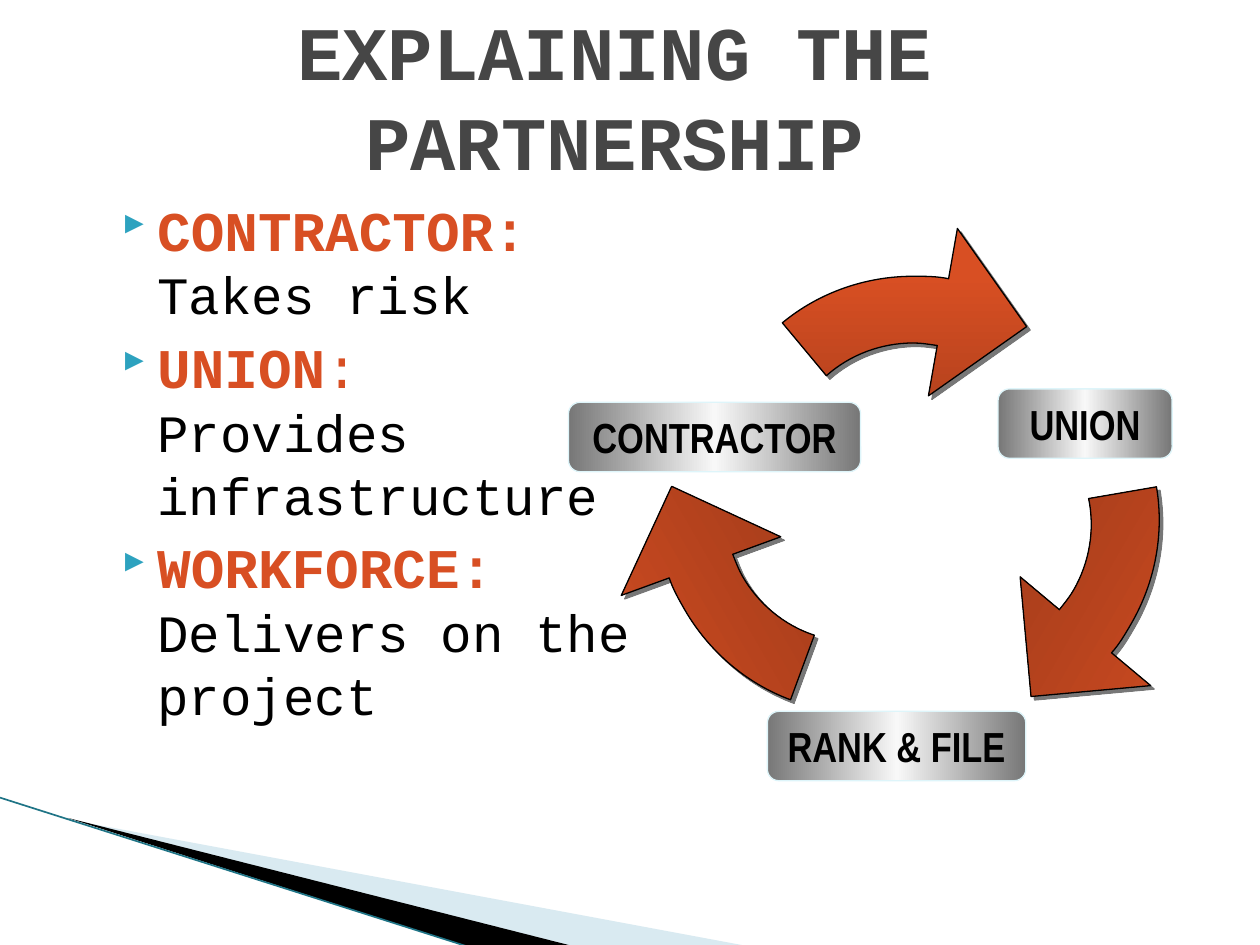
from lxml import etree
from pptx import Presentation
from pptx.dml.color import RGBColor
from pptx.enum.shapes import MSO_CONNECTOR, MSO_SHAPE
from pptx.enum.text import MSO_ANCHOR, PP_ALIGN
from pptx.oxml.ns import qn
from pptx.util import Cm, Pt

STRAIGHT = MSO_CONNECTOR.STRAIGHT
ROUNDED = MSO_SHAPE.ROUNDED_RECTANGLE
MIDDLE = MSO_ANCHOR.MIDDLE
CENTER = PP_ALIGN.CENTER

ORANGE, BLACK, TEAL = "D84F23", "000000", "2DA2BF"
TITLE_FONT = dict(name="Courier New", size=Pt(43.2), bold=True)
HEADING_FONT = dict(name="Courier New", size=Pt(32), bold=True)
COLON_FONT = dict(HEADING_FONT, bold=False)
DETAIL_FONT = dict(name="Courier New", size=Pt(30), bold=False)
LABEL_FONT = dict(name="Arial Narrow", size=Pt(24), bold=True)

ROLES = [
    ("CONTRACTOR:", "", "Takes risk"),
    ("UNION", ":", "Provides infrastructure"),
    ("WORKFORCE:", "", "Delivers on the project"),
]
ARROW_SIZE = 8.2
ARROW_GRID = 323
ARROW_OUTLINE = [
    ("moveTo", [(181, 55)]),
    ("cubicBezTo", [(174, 54), (168, 53), (162, 53)]),
    ("cubicBezTo", [(137, 53), (112, 62), (93, 79)]),
    ("lnTo", [(58, 37)]),
    ("cubicBezTo", [(87, 13), (124, 0), (162, 0)]),
    ("cubicBezTo", [(171, 0), (181, 0), (190, 2)]),
    ("lnTo", [(197, -38)]),
    ("lnTo", [(252, 40)]),
    ("lnTo", [(174, 95)]),
    ("lnTo", [(181, 55)]),
    ("close", []),
]
ARROWS = [(2.84, 0, 0), (1.8, 0.58, 240), (3.7, 0.84, 120)]
LABELS = [
    ("CONTRACTOR", 0, 2.54, 5.89),
    ("UNION", 8.66, 2.27, 3.51),
    ("RANK & FILE", 4.01, 8.77, 5.21),
]


def color(value):
    """Turn a hex string into a colour."""
    return RGBColor.from_string(value)


def element(parent, tag, **attributes):
    """Append a drawing element and return it."""
    return etree.SubElement(parent, qn("a:" + tag), attributes)


def add_run(paragraph, text, formats, value):
    """Add one run with a dict of font values and a colour."""
    run = paragraph.add_run()
    run.text = text
    for key, setting in formats.items():
        setattr(run.font, key, setting)
    run.font.color.rgb = color(value)


def fill_gradient(shape, colors, angle):
    """Fill a shape with evenly spaced gradient stops."""
    shape.fill.gradient()
    shape.fill.gradient_angle = angle
    stops = shape.element.spPr.find(".//" + qn("a:gsLst"))
    for stop in list(stops):
        stops.remove(stop)
    for index, value in enumerate(colors):
        position = 100000 * index // (len(colors) - 1)
        stop = element(stops, "gs", pos=str(position))
        element(stop, "srgbClr", val=value)


def outline(shape, value):
    """Draw a thin outline."""
    shape.line.color.rgb = color(value)
    shape.line.width = Pt(0.75)


def add_polygon(slide, points):
    """Build a closed outline from points in centimetres."""
    corners = [(Cm(x), Cm(y)) for x, y in points]
    builder = slide.shapes.build_freeform(*corners[0], scale=1.0)
    builder.add_line_segments(corners[1:], close=True)
    polygon = builder.convert_to_shape()
    polygon.shadow.inherit = False
    return polygon


def add_corner_sweep(slide, left, top, width, height):
    """Draw the wedges and edge line in the bottom left corner."""
    bottom = top + height
    start = left + 1.37
    wedges = [
        ("A0CBDC", [(start, top + 0.44), (left + width, bottom), (left + 11.58, bottom)]),
        (BLACK, [(start, top + 0.41), (left + 11.58, bottom), (left + 9.42, bottom)]),
    ]
    for value, points in wedges:
        wedge = add_polygon(slide, points)
        wedge.fill.solid()
        wedge.fill.fore_color.rgb = color(value)
        wedge.line.fill.background()
        if value != BLACK:
            rgb = wedge.element.spPr.find(".//" + qn("a:srgbClr"))
            element(rgb, "alpha", val="40000")
    edge = slide.shapes.add_connector(
        STRAIGHT, Cm(left), Cm(top), Cm(left + 9.42), Cm(bottom))
    edge.line.color.rgb = color("1F7486")
    edge.line.width = Pt(0.95)
    element(edge.element.spPr, "effectLst")


def add_title(slide, left, top, width, height):
    """Place and format the title."""
    title = slide.shapes.title
    title.left, title.top, title.width, title.height = map(Cm, (left, top, width, height))
    frame = title.text_frame
    frame.word_wrap = True
    frame.vertical_anchor = MIDDLE
    paragraph = frame.paragraphs[0]
    paragraph.alignment = CENTER
    add_run(paragraph, "EXPLAINING THE PARTNERSHIP", TITLE_FONT, "464646")


def add_roles(slide, left, top, width, height):
    """List each partner with its part in the work."""
    frame = slide.shapes.add_textbox(*map(Cm, (left, top, width, height))).text_frame
    frame.word_wrap = True
    for index, (heading, colon, detail) in enumerate(ROLES):
        paragraph = frame.add_paragraph() if index else frame.paragraphs[0]
        properties = paragraph._p.get_or_add_pPr()
        properties.set("marL", str(Cm(1.02)))
        properties.set("indent", str(-Cm(0.71)))
        element(element(properties, "buClr"), "srgbClr", val=TEAL)
        element(properties, "buSzPct", val="68000")
        element(properties, "buFont", typeface="Wingdings 3", charset="2")
        element(properties, "buChar", char="}")
        if index:
            paragraph.space_before = Pt(4)
        add_run(paragraph, heading, HEADING_FONT, ORANGE)
        if colon:
            add_run(paragraph, colon, COLON_FONT, ORANGE)
        paragraph.add_line_break()
        add_run(paragraph, detail, DETAIL_FONT, BLACK)


def add_arrow(slide, left, top, turn):
    """Draw a curved arrow in its square frame and turn it."""
    right, bottom = left + ARROW_SIZE, top + ARROW_SIZE
    arrow = add_polygon(slide, [(left, top), (right, top), (right, bottom), (left, bottom)])
    outlines = arrow.element.spPr.find(".//" + qn("a:pathLst"))
    for square in list(outlines):
        outlines.remove(square)
    curve = element(outlines, "path", w=str(ARROW_GRID), h=str(ARROW_GRID))
    for command, points in ARROW_OUTLINE:
        step = element(curve, command)
        for x, y in points:
            element(step, "pt", x=str(x), y=str(y))
    arrow.rotation = turn
    fill_gradient(arrow, (ORANGE, "642510"), 270)
    outline(arrow, BLACK)
    effects = arrow.element.spPr.find(qn("a:effectLst"))
    shadow = element(effects, "outerShdw", dist=str(Pt(2.8)), dir="2700000",
                     algn="ctr", rotWithShape="0")
    element(shadow, "srgbClr", val="777777")


def add_label(slide, text, left, top, width):
    """Place the name of one partner on a metallic plate."""
    label = slide.shapes.add_shape(ROUNDED, *map(Cm, (left, top, width, 1.4)))
    label.shadow.inherit = False
    fill_gradient(label, ("777777", "F8F8F8", "777777"), 0)
    outline(label, "DEF5FA")
    frame = label.text_frame
    frame.word_wrap = False
    frame.vertical_anchor = MIDDLE
    paragraph = frame.paragraphs[0]
    paragraph.alignment = CENTER
    add_run(paragraph, text, LABEL_FONT, BLACK)


def add_cycle(slide, left, top):
    """Draw the three arrows and the partner labels of the cycle."""
    for x, y, turn in ARROWS:
        add_arrow(slide, left + x, top + y, turn)
    for text, x, y, width in LABELS:
        add_label(slide, text, left + x, top + y, width)


def main():
    """Build the slide and save it."""
    presentation = Presentation()
    presentation.slide_width, presentation.slide_height = Cm(25.4), Cm(19.05)
    slide = presentation.slides.add_slide(presentation.slide_layouts[5])
    add_corner_sweep(slide, 0, 16.08, 15.11, 3)
    add_title(slide, 0.64, 0.33, 23.5, 3.18)
    add_roles(slide, 1.9, 3.81, 11.43, 12.57)
    add_cycle(slide, 11.46, 5.57)
    presentation.save("out.pptx")


if __name__ == "__main__":
    main()
